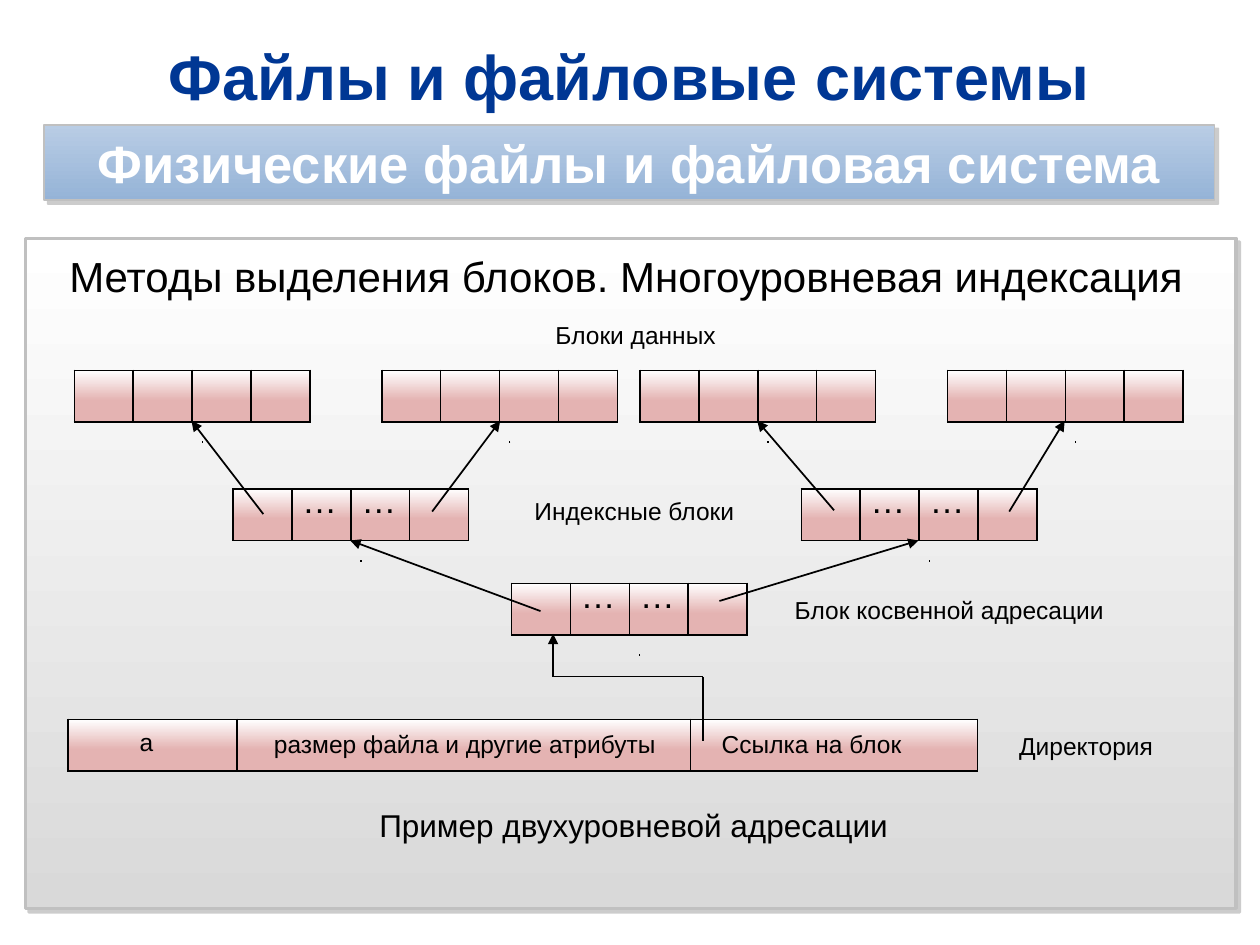
"""Build a slide on two-level indexed allocation of file blocks."""
from dataclasses import dataclass
from typing import Any

import lxml.etree
import pptx
import pptx.dml.color
import pptx.enum.shapes
import pptx.enum.text
import pptx.oxml
import pptx.oxml.ns
import pptx.util

Inches = pptx.util.Inches
Pt = pptx.util.Pt
Align = pptx.enum.text.PP_ALIGN
Anchor = pptx.enum.text.MSO_ANCHOR
Fit = pptx.enum.text.MSO_AUTO_SIZE
qn = pptx.oxml.ns.qn

BLACK, GREY = "000000", "C0C0C0"
CELL, HIGH, STEP = 1.87 / 4, 0.41, 0.47


@dataclass
class Label:
    text: str
    box: tuple[float, float, float, float]
    size: int = 14
    align: Any = Align.CENTER


@dataclass
class Block:
    left: float
    top: float
    dots: bool = False


@dataclass
class Link:
    start: tuple[float, float]
    end: tuple[float, float]
    arrow: bool = True


LABELS = [
    Label("Методы выделения блоков. Многоуровневая индексация", (0.3, 1.94, 9.34, 0.5), 24),
    Label("Блоки данных", (3.67, 2.49, 2.75, 0.34)),
    Label("Индексные блоки", (3.66, 3.89, 2.75, 0.34)),
    Label("Блок косвенной адресации", (6.16, 4.67, 2.75, 0.34)),
    Label("a", (1.01, 5.72, 0.31, 0.34), align=Align.LEFT),
    Label("размер файла и другие атрибуты", (1.8, 5.74, 3.78, 0.34)),
    Label("Ссылка на блок", (5.63, 5.74, 2.13, 0.34), align=Align.LEFT),
    Label("Директория", (7.99, 5.75, 1.34, 0.34), align=Align.LEFT),
    Label("Пример двухуровневой адресации", (2.46, 6.35, 5.14, 0.4), 18),
]
BLOCKS = [
    *(Block(left, 2.94) for left in (0.59, 3.03, 5.08, 7.52)),
    *(Block(left, 3.88, True) for left in (1.85, 6.36)),
    Block(4.06, 4.63, True),
]
LINKS = [
    Link((2.09, 4.08), (1.52, 3.34)),
    Link((3.43, 4.06), (3.97, 3.34)),
    Link((6.62, 4.05), (6.01, 3.34)),
    Link((8.01, 4.06), (8.45, 3.34)),
    Link((4.29, 4.85), (2.78, 4.29)),
    Link((5.71, 4.77), (7.29, 4.29)),
    Link((5.58, 5.88), (5.58, 5.37), False),
    Link((5.58, 5.37), (4.39, 5.37), False),
    Link((4.39, 5.37), (4.39, 5.03)),
]


def paint(code: str) -> Any:
    return pptx.dml.color.RGBColor.from_string(code)


def apply(item: Any, style: dict[str, Any]) -> None:
    for key, val in style.items():
        setattr(item, key, val)


def blend(fill: Any, top: str, base: str, stop: float = 1.0) -> None:
    fill.gradient()
    fill.gradient_angle = 270
    for mark, code, spot in zip(fill.gradient_stops, (top, base), (0, stop)):
        mark.color.rgb = paint(code)
        mark.position = spot


def write(frame: Any, text: str, size: int, code: str = BLACK,
          bold: bool = False, align: Any = Align.CENTER) -> None:
    frame.text = text
    frame.word_wrap = True
    para = frame.paragraphs[0]
    para.alignment = align
    apply(para.runs[0].font, {"size": Pt(size), "name": "Arial", "bold": bold})
    para.runs[0].font.color.rgb = paint(code)


def add_label(slide: Any, label: Label) -> None:
    frame = slide.shapes.add_textbox(*map(Inches, label.box)).text_frame
    write(frame, label.text, label.size, align=label.align)
    frame.auto_size = Fit.SHAPE_TO_FIT_TEXT


def add_panel(slide: Any, box: tuple[float, ...], top: str, base: str, width: float) -> Any:
    kind = pptx.enum.shapes.MSO_SHAPE.RECTANGLE
    panel = slide.shapes.add_shape(kind, *map(Inches, box))
    blend(panel.fill, top, base)
    panel.line.color.rgb = paint(GREY)
    panel.line.width = Pt(width)
    panel.shadow.inherit = False
    effect = panel.element.spPr.find(qn("a:effectLst"))
    shade = lxml.etree.SubElement(effect, qn("a:outerShdw"), dist=str(Pt(3)),
                                  dir="2700000", algn="tl", rotWithShape="0")
    tint = lxml.etree.SubElement(shade, qn("a:srgbClr"), val="808080")
    lxml.etree.SubElement(tint, qn("a:alpha"), val="40000")
    return panel


def add_border(cell: Any) -> None:
    props = cell._tc.get_or_add_tcPr()
    for side in "LRTB":
        edge = lxml.etree.SubElement(props, qn(f"a:ln{side}"), w=str(Pt(1)))
        solid = lxml.etree.SubElement(edge, qn("a:solidFill"))
        lxml.etree.SubElement(solid, qn("a:srgbClr"), val=BLACK)


def add_row(slide: Any, left: float, top: float, cols: list[float]) -> None:
    box = map(Inches, (left, top, sum(cols), HIGH))
    table = slide.shapes.add_table(1, len(cols), *box).table
    apply(table, {"first_row": False, "horz_banding": False})
    for col, width in zip(table.columns, cols):
        col.width = Inches(width)
    for cell in table.iter_cells():
        add_border(cell)
        blend(cell.fill, "FFFFFF", "E4B3B2", 0.58)


def add_link(slide: Any, link: Link) -> None:
    kind = pptx.enum.shapes.MSO_CONNECTOR.STRAIGHT
    line = slide.shapes.add_connector(kind, *map(Inches, link.start + link.end))
    line.line.color.rgb = paint(BLACK)
    line.line.width = Pt(1)
    props = line.element.spPr
    if link.arrow:
        lxml.etree.SubElement(props.find(qn("a:ln")), qn("a:tailEnd"), type="triangle")
    lxml.etree.SubElement(props, qn("a:effectLst"))


def add_block(slide: Any, block: Block) -> None:
    left, top = block.left, block.top
    add_row(slide, left, top, [CELL] * 4)
    tick = top + 0.57
    add_link(slide, Link((left + 1.02, tick), (left + 1.01, tick), False))
    if block.dots:
        for num in range(2):
            spot = (left + 0.45 + num * STEP, top - 0.13, STEP, 0.44)
            add_label(slide, Label("…", spot, 20, Align.LEFT))


def main() -> None:
    deck = pptx.Presentation()
    apply(deck, {"slide_width": Inches(10), "slide_height": Inches(7.5)})
    slide = deck.slides.add_slide(deck.slide_layouts[5])
    title = slide.shapes.title
    apply(title, dict(zip(("left", "top", "width", "height"),
                          map(Inches, (0.35, 0.26, 9.29, 0.68)))))
    write(title.text_frame, "Файлы и файловые системы", 36, "003794", True)
    apply(title.text_frame, {"vertical_anchor": Anchor.MIDDLE, "auto_size": Fit.NONE})

    add_panel(slide, (0.2, 1.89, 9.61, 5.32), "FFFFFF", "D9D9D9", 1.75)
    banner = add_panel(slide, (0.35, 0.99, 9.29, 0.6), "B9CDE5", "95B3D7", 1)
    write(banner.text_frame, "Физические файлы и файловая система", 30, "FFFFFF", True)
    apply(banner.text_frame, {
        "vertical_anchor": Anchor.MIDDLE,
        "margin_left": Inches(0.24), "margin_right": Inches(0.24),
        "margin_top": Inches(0.04), "margin_bottom": Inches(0.04),
    })

    add_row(slide, 0.54, 5.71, [1.34, 3.6, 2.28])
    for block in BLOCKS:
        add_block(slide, block)
    for label in LABELS:
        add_label(slide, label)
    for link in LINKS:
        add_link(slide, link)
    deck.save("out.pptx")


if __name__ == "__main__":
    main()
